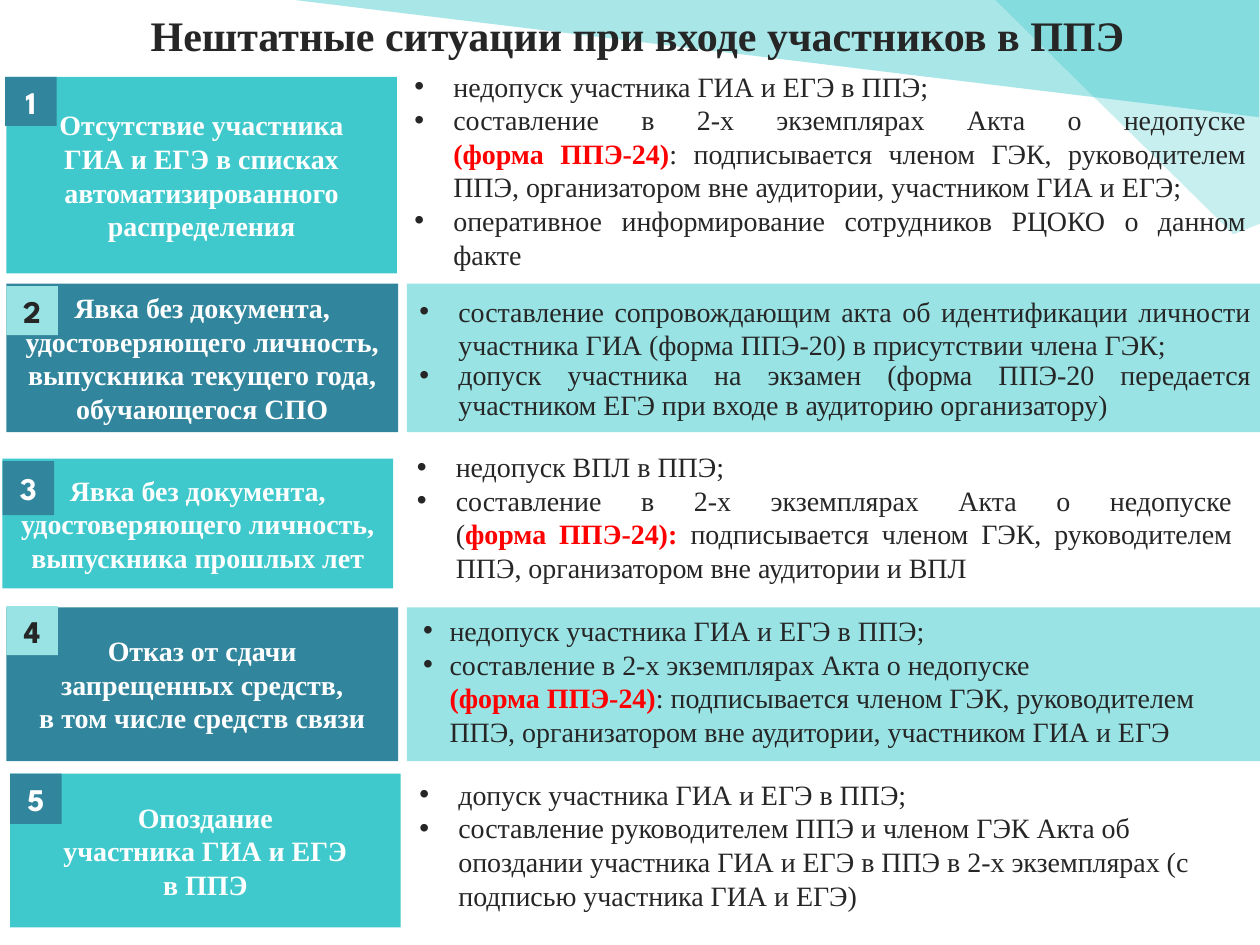
from lxml import etree
from pptx import Presentation
from pptx.dml.color import RGBColor
from pptx.enum.shapes import MSO_SHAPE
from pptx.enum.text import MSO_ANCHOR, PP_ALIGN
from pptx.oxml.ns import qn
from pptx.util import Inches, Pt

RECTANGLE = MSO_SHAPE.RECTANGLE
TOP, MIDDLE = MSO_ANCHOR.TOP, MSO_ANCHOR.MIDDLE
LEFT, CENTER, JUSTIFY = PP_ALIGN.LEFT, PP_ALIGN.CENTER, PP_ALIGN.JUSTIFY

TURQUOISE, TEAL, PALE = "40C9CC", "31859C", "9AE3E4"
DECOR, DARK, WHITE, RED = "20C0C4", "262626", "FFFFFF", "FF0000"

TITLE_FONT = {"name": "Times New Roman", "size": Pt(24), "bold": True}
LABEL_FONT = {"name": "Times New Roman", "size": Pt(16), "bold": True}
DETAIL_FONT = {"name": "Times New Roman", "size": Pt(16), "bold": False}
BADGE_FONT = {"name": "League Spartan", "size": Pt(18), "bold": True}

DECORATIONS = [
    ([(2.17, -0.02), (9.99, 0.93), (9.99, -0.03)], 39),
    ([(10.04, 1.76), (9.79, 1.86), (7.9, 0), (10.03, 0), (10.03, 1.78)], 25),
]

# In the details, text between asterisks is highlighted.
SITUATIONS = [
    {
        "label": "Отсутствие участника\nГИА и ЕГЭ в списках автоматизированного распределения",
        "label_box": (0.05, 0.61, 3.1, 1.56),
        "badge_box": (0.04, 0.61, 0.41, 0.39),
        "detail_box": (3.19, 0.5, 6.8, 1.72),
        "details": [
            "недопуск участника ГИА и ЕГЭ в ППЭ;",
            "составление в 2-х экземплярах Акта о недопуске\n*(форма ППЭ-24)*: подписывается членом ГЭК, "
            "руководителем ППЭ, организатором вне аудитории, участником ГИА и ЕГЭ;",
            "оперативное информирование сотрудников РЦОКО о данном факте",
        ],
    },
    {
        "label": "Явка без документа, удостоверяющего личность, "
                 "выпускника текущего года, обучающегося СПО",
        "label_box": (0.05, 2.25, 3.11, 1.18),
        "badge_box": (0.05, 2.27, 0.41, 0.39),
        "detail_box": (3.23, 2.25, 6.8, 1.18),
        "detail_fill": PALE,
        "anchor": MIDDLE,
        "last_spacing": 0.9,
        "details": [
            "составление сопровождающим акта об идентификации личности участника ГИА "
            "(форма ППЭ-20) в присутствии члена ГЭК;",
            "допуск участника на экзамен (форма ППЭ-20 передается участником ЕГЭ "
            "при входе в аудиторию организатору)",
        ],
    },
    {
        "label": "Явка без документа, удостоверяющего личность, выпускника прошлых лет",
        "label_box": (0.02, 3.64, 3.1, 1.03),
        "badge_box": (0.02, 3.66, 0.41, 0.43),
        "detail_box": (3.21, 3.52, 6.67, 1.18),
        "details": [
            "недопуск ВПЛ в ППЭ;",
            "составление в 2-х экземплярах Акта о недопуске\n(*форма ППЭ-24): *подписывается членом ГЭК, "
            "руководителем ППЭ, организатором вне аудитории и ВПЛ",
        ],
    },
    {
        "label": "Отказ от сдачи\nзапрещенных средств,\nв том числе средств связи",
        "label_box": (0.05, 4.82, 3.11, 1.22),
        "badge_box": (0.05, 4.81, 0.41, 0.39),
        "panel_box": (3.23, 4.82, 6.79, 1.22),
        "detail_box": (3.16, 4.82, 6.9, 1.18),
        "align": LEFT,
        "hanging": 0.21,
        "details": [
            "недопуск участника ГИА и ЕГЭ в ППЭ;",
            "составление в 2-х экземплярах Акта о недопуске\n*(форма ППЭ-24)*: подписывается членом ГЭК, "
            "руководителем ППЭ, организатором вне аудитории, участником ГИА и ЕГЭ",
        ],
    },
    {
        "label": "Опоздание\nучастника ГИА и ЕГЭ\nв ППЭ",
        "label_box": (0.08, 6.14, 3.1, 1.22),
        "badge_box": (0.08, 6.14, 0.41, 0.4),
        "detail_box": (3.23, 6.12, 6.77, 1.18),
        "align": LEFT,
        "details": [
            "допуск участника ГИА и ЕГЭ в ППЭ;",
            "составление руководителем ППЭ и членом ГЭК Акта об опоздании участника ГИА и ЕГЭ "
            "в ППЭ в 2-х экземплярах (с подписью участника ГИА и ЕГЭ)",
        ],
    },
]


def rgb(color):
    return RGBColor.from_string(color)


def paint(shape, color):
    shape.shadow.inherit = False
    shape.fill.solid()
    shape.fill.fore_color.rgb = rgb(color)
    shape.line.fill.background()


def add_box(slide, box, fill=None, anchor=MIDDLE):
    """Add a filled rectangle, or a plain text box when there is no fill."""
    bounds = [Inches(length) for length in box]
    if fill:
        shape = slide.shapes.add_shape(RECTANGLE, *bounds)
        paint(shape, fill)
    else:
        shape = slide.shapes.add_textbox(*bounds)
    shape.text_frame.word_wrap = True
    shape.text_frame.vertical_anchor = anchor
    return shape


def write(paragraph, text, font, color, align=CENTER):
    paragraph.alignment = align
    for part_index, part in enumerate(text.split("*")):
        highlighted = part_index % 2 == 1
        for line_index, line in enumerate(part.split("\n")):
            if line_index:
                paragraph.add_line_break()
            if not line:
                continue
            run = paragraph.add_run()
            run.text = line
            for attribute, value in font.items():
                setattr(run.font, attribute, value)
            run.font.color.rgb = rgb(RED if highlighted else color)
            if highlighted:
                run.font.bold = True


def add_bullet(paragraph, hanging):
    properties = paragraph._p.get_or_add_pPr()
    properties.set("marL", str(Inches(0.31)))
    properties.set("indent", str(-Inches(hanging)))
    etree.SubElement(properties, qn("a:buFont")).set("typeface", "Arial")
    etree.SubElement(properties, qn("a:buChar")).set("char", "•")


def add_decoration(slide, points, opacity):
    corners = [(Inches(x), Inches(y)) for x, y in points]
    builder = slide.shapes.build_freeform(*corners[0])
    builder.add_line_segments(corners[1:], close=True)
    shape = builder.convert_to_shape()
    paint(shape, DECOR)
    color = shape.fill._xPr.find(".//" + qn("a:srgbClr"))
    etree.SubElement(color, qn("a:alpha")).set("val", str(opacity * 1000))


def add_title(slide, box, text):
    shape = add_box(slide, box)
    write(shape.text_frame.paragraphs[0], text, TITLE_FONT, DARK)


def add_details(slide, box, situation):
    shape = add_box(slide, box, situation.get("detail_fill"), situation.get("anchor", TOP))
    frame = shape.text_frame
    for index, text in enumerate(situation["details"]):
        paragraph = frame.add_paragraph() if index else frame.paragraphs[0]
        write(paragraph, text, DETAIL_FONT, DARK, situation.get("align", JUSTIFY))
        if "last_spacing" in situation and text == situation["details"][-1]:
            paragraph.line_spacing = situation["last_spacing"]
        add_bullet(paragraph, situation.get("hanging", 0.31))


def add_situation(slide, number, situation):
    odd = number % 2 == 1
    if "panel_box" in situation:
        add_box(slide, situation["panel_box"], PALE)
    add_details(slide, situation["detail_box"], situation)
    label = add_box(slide, situation["label_box"], TURQUOISE if odd else TEAL)
    write(label.text_frame.paragraphs[0], situation["label"], LABEL_FONT, WHITE)
    badge = add_box(slide, situation["badge_box"], TEAL if odd else PALE)
    write(badge.text_frame.paragraphs[0], str(number), BADGE_FONT, WHITE if odd else DARK)


def main():
    presentation = Presentation()
    presentation.slide_width = Inches(10)
    presentation.slide_height = Inches(7.5)
    slide = presentation.slides.add_slide(presentation.slide_layouts[6])
    for points, opacity in DECORATIONS:
        add_decoration(slide, points, opacity)
    add_title(slide, (0.16, -0.19, 9.8, 0.93), "Нештатные ситуации при входе участников в ППЭ")
    for number, situation in enumerate(SITUATIONS, start=1):
        add_situation(slide, number, situation)
    presentation.save("out.pptx")


if __name__ == "__main__":
    main()
